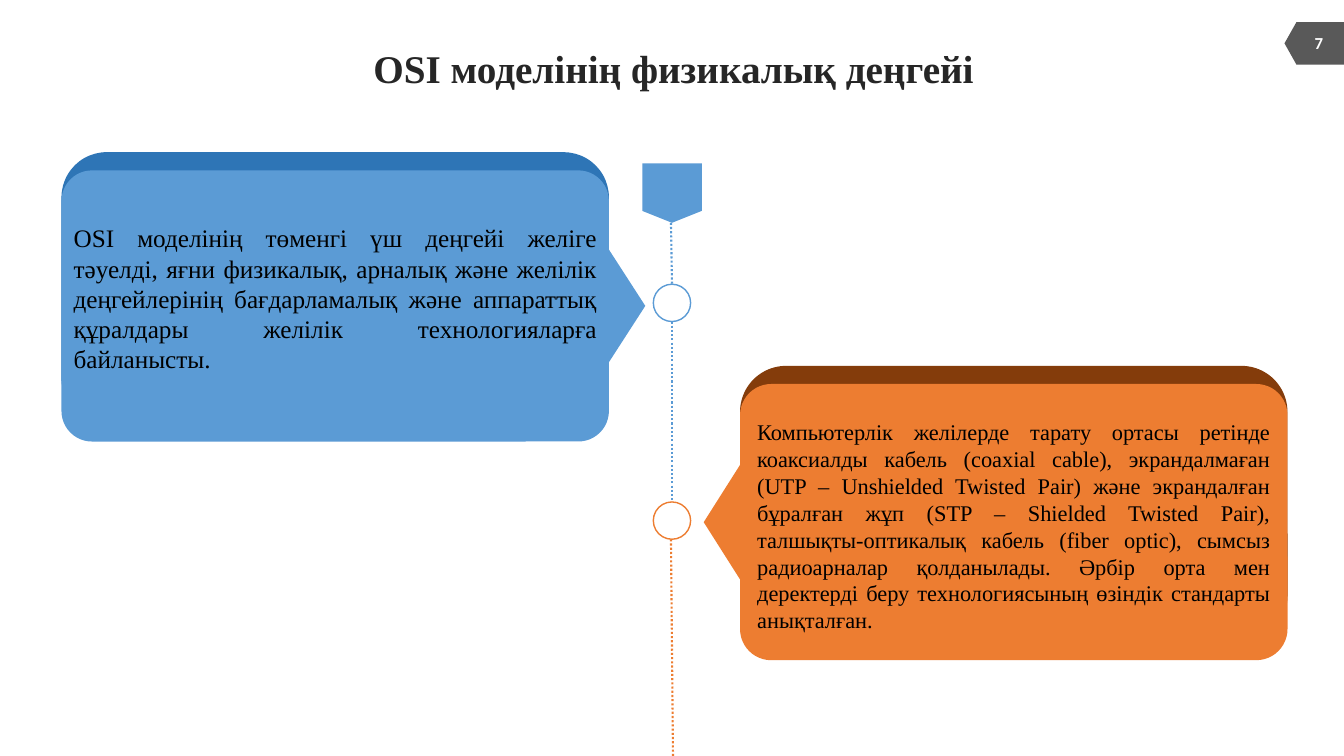
from lxml.etree import SubElement
from pptx import Presentation
from pptx.dml.color import RGBColor
from pptx.enum.dml import MSO_LINE
from pptx.enum.shapes import MSO_CONNECTOR, MSO_SHAPE
from pptx.enum.text import MSO_ANCHOR, MSO_AUTO_SIZE, PP_ALIGN
from pptx.oxml.ns import qn
from pptx.util import Inches, Pt

BLUE = RGBColor(0x5B, 0x9B, 0xD5)
DARK_BLUE = RGBColor(0x2E, 0x75, 0xB6)
ORANGE = RGBColor(0xED, 0x7D, 0x31)
BROWN = RGBColor(0x84, 0x3C, 0x0B)
GREY = RGBColor(0x59, 0x59, 0x59)
INK = RGBColor(0x26, 0x26, 0x26)
BLACK = RGBColor(0, 0, 0)
WHITE = RGBColor(0xFF, 0xFF, 0xFF)

SERIF = "Times New Roman"
SLIDE_W, SLIDE_H = 13.33, 7.5
AXIS = SLIDE_W / 2
NODE = 0.37   # circle diameter
LID = 0.18    # visible strip of the back card
TIP = 0.53    # depth of the pointer
TIP_OUT = 0.36  # part of the pointer beyond the card

LOWER_LEVELS = (
    "OSI моделінің төменгі үш деңгейі желіге тәуелді, яғни физикалық, "
    "арналық және желілік деңгейлерінің бағдарламалық және аппараттық "
    "құралдары желілік технологияларға байланысты.")
MEDIA = (
    "Компьютерлік желілерде тарату ортасы ретінде коаксиалды кабель "
    "(coaxial cable), экрандалмаған (UTP – Unshielded Twisted Pair) және "
    "экрандалған бұралған жұп (STP – Shielded Twisted Pair), "
    "талшықты-оптикалық кабель (fiber optic), сымсыз радиоарналар "
    "қолданылады. Әрбір орта мен деректерді беру технологиясының өзіндік "
    "стандарты анықталған.")


def add_filled(slide, kind, x, y, w, h, fill, outline=None):
    sp = slide.shapes.add_shape(kind, Inches(x), Inches(y), Inches(w), Inches(h))
    sp.shadow.inherit = False
    sp.fill.solid()
    sp.fill.fore_color.rgb = fill
    if outline is None:
        sp.line.fill.background()
    else:
        sp.line.color.rgb = outline
        sp.line.width = Pt(1)
    return sp


def write(tf, text, size, color, align, font=SERIF, bold=False, inset=0):
    tf.text = text
    tf.auto_size = MSO_AUTO_SIZE.NONE
    tf.margin_left = tf.margin_right = Inches(inset)
    tf.margin_top = tf.margin_bottom = Inches(inset / 2)
    p = tf.paragraphs[0]
    p.alignment = align
    f = p.runs[0].font
    f.name, f.size, f.bold = font, Pt(size), bold
    f.color.rgb = color
    return p


def add_textbox(slide, x, y, w, h):
    tf = slide.shapes.add_textbox(Inches(x), Inches(y), Inches(w), Inches(h)).text_frame
    tf.word_wrap = True
    return tf


def add_title(slide, x, y, w, h, text):
    sp = slide.shapes.title
    sp.left, sp.top, sp.width, sp.height = map(Inches, (x, y, w, h))
    tf = sp.text_frame
    p = write(tf, text, 28, INK, PP_ALIGN.CENTER, bold=True)
    p.line_spacing = 0.9
    tf.word_wrap = False
    tf.vertical_anchor = MSO_ANCHOR.MIDDLE


def add_page_tab(slide, x, y, w, h, number):
    # The tab is a quarter-turned connector symbol, so its sides swap
    tab = add_filled(slide, MSO_SHAPE.FLOWCHART_OFFPAGE_CONNECTOR,
                     x + (w - h) / 2, y + (h - w) / 2, h, w, GREY)
    tab.rotation = 90
    tf = add_textbox(slide, x + 0.06, y, w - 0.03, h - 0.02)
    tf.vertical_anchor = MSO_ANCHOR.MIDDLE
    write(tf, number, 12, WHITE, PP_ALIGN.CENTER, "Calibri", True, 0.1)


def add_card(slide, x, y, w, h, fill, lid, side, text, size, pad_x, pad_y):
    """Two stacked cards with a pointer; side is 1 for right, -1 for left."""
    add_filled(slide, MSO_SHAPE.ROUNDED_RECTANGLE, x, y, w, h, lid)
    front = add_filled(slide, MSO_SHAPE.ROUNDED_RECTANGLE, x, y + LID, w, h, fill)
    front.adjustments[0] = 0.113

    # Pointer centred on the front card
    base = 0.61 * h
    edge = x + w if side > 0 else x
    mid_x = edge + side * (TIP_OUT - TIP / 2)
    mid_y = y + LID + h / 2
    pointer = add_filled(slide, MSO_SHAPE.ISOSCELES_TRIANGLE,
                         mid_x - base / 2, mid_y - TIP / 2, base, TIP, fill)
    pointer.rotation = 90 * side % 360

    tf = add_textbox(slide, x + pad_x, y + pad_y, w - 2 * pad_x, h + LID - 2 * pad_y)
    write(tf, text, size, BLACK, PP_ALIGN.JUSTIFY)


def add_dotted(slide, x1, y1, x2, y2, color):
    line = slide.shapes.add_connector(MSO_CONNECTOR.STRAIGHT, Inches(x1), Inches(y1),
                                      Inches(x2), Inches(y2))
    line.line.color.rgb = color
    line.line.width = Pt(1.5)
    line.line.dash_style = MSO_LINE.ROUND_DOT
    SubElement(line._element.spPr, qn("a:effectLst"))


def add_timeline(slide, top, bottom, nodes):
    flag = 0.59
    add_filled(slide, MSO_SHAPE.FLOWCHART_OFFPAGE_CONNECTOR,
               AXIS - flag / 2, top, flag, flag, BLUE)
    # Dotted stretches between the flag, the nodes and the slide edge
    first, second = (y for y, _ in nodes)
    add_dotted(slide, AXIS - 0.01, top + flag, AXIS, first, BLUE)
    add_dotted(slide, AXIS, first + NODE, AXIS, second, BLUE)
    add_dotted(slide, AXIS - 0.01, second + NODE, AXIS + 0.01, bottom, ORANGE)
    for y, color in nodes:
        add_filled(slide, MSO_SHAPE.OVAL, AXIS - NODE / 2, y, NODE, NODE, WHITE, color)


def main():
    prs = Presentation()
    prs.slide_width, prs.slide_height = Inches(SLIDE_W), Inches(SLIDE_H)
    slide = prs.slides.add_slide(prs.slide_layouts[5])

    add_title(slide, 2.57, 0.44, 8.22, 0.52, "OSI моделінің физикалық деңгейі")
    add_page_tab(slide, SLIDE_W - 0.59, 0.22, 0.59, 0.42, "7")
    add_timeline(slide, 1.62, SLIDE_H, [(2.82, BLUE), (4.98, ORANGE)])
    add_card(slide, 0.61, 1.51, 5.43, 2.69, BLUE, DARK_BLUE, 1,
             LOWER_LEVELS, 18, 0.12, 0.7)
    add_card(slide, 7.34, 3.63, 5.43, 2.74, ORANGE, BROWN, -1,
             MEDIA, 16, 0.17, 0.52)
    prs.save("out.pptx")


if __name__ == "__main__":
    main()
